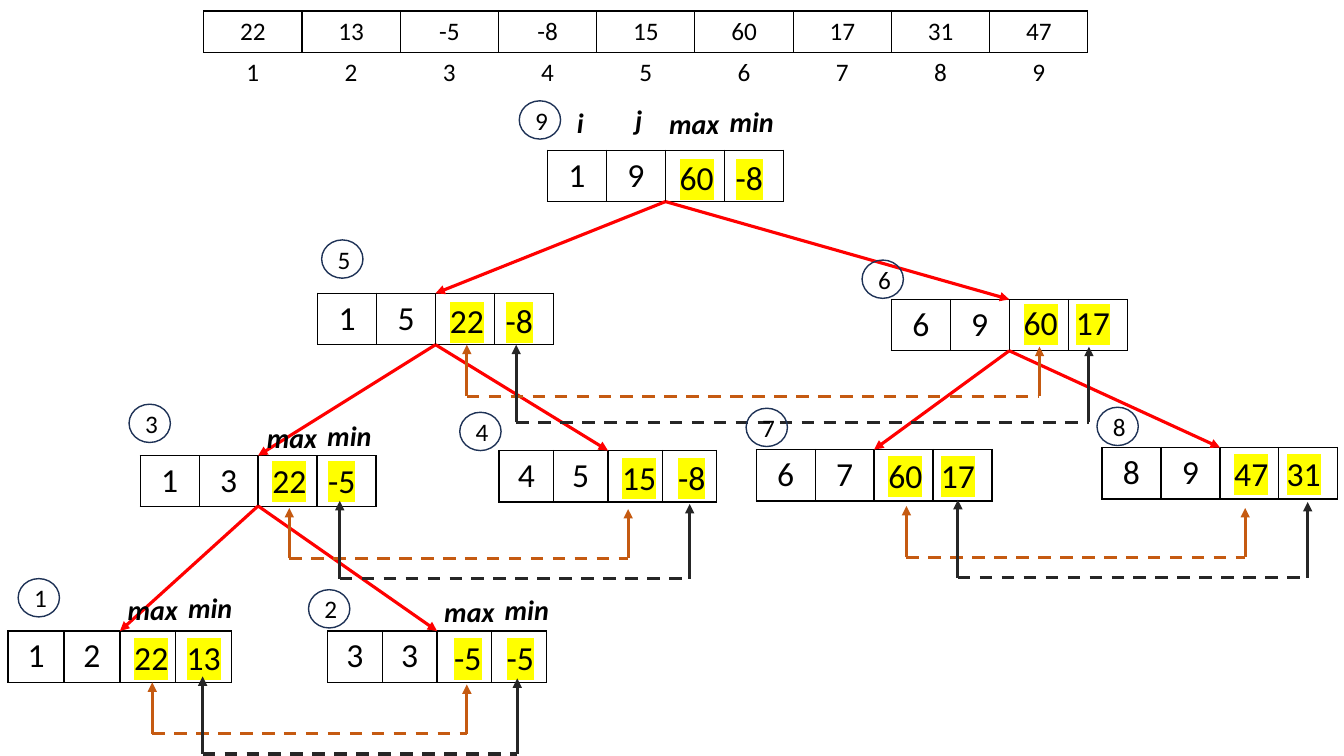
from dataclasses import dataclass

from lxml.etree import SubElement
from pptx import Presentation
from pptx.dml.color import RGBColor
from pptx.enum.dml import MSO_LINE
from pptx.enum.shapes import MSO_CONNECTOR, MSO_SHAPE
from pptx.enum.text import MSO_ANCHOR, MSO_AUTO_SIZE, PP_ALIGN
from pptx.oxml.ns import qn
from pptx.util import Emu, Pt

PX = 9144
FONT = "Calibri"
BLACK = RGBColor(0x00, 0x00, 0x00)
RED = RGBColor(0xFF, 0x00, 0x00)
YELLOW = RGBColor(0xFF, 0xFF, 0x00)
ORANGE = RGBColor(0xC5, 0x5A, 0x11)
CHARCOAL = RGBColor(0x26, 0x26, 0x26)
NAVY = RGBColor(0x1E, 0x32, 0x56)
PLAIN_TABLE_STYLE = "{2D5ABB26-0587-4C30-8999-92F81FD0307C}"
ALL_SIDES = ("a:lnL", "a:lnR", "a:lnT", "a:lnB")
TOP_SIDE = ("a:lnT",)


@dataclass
class Node:
    order: int
    box: tuple
    bounds: tuple
    extremes: tuple
    values_top: int
    badge: tuple
    labels: tuple = None


NUMBERS = (22, 13, -5, -8, 15, 60, 17, 31, 47)

NODES = (
    Node(1, (8, 626, 222, 50), (1, 2), (22, 13), 627, (18, 574), (109, 583)),
    Node(2, (325, 626, 217, 50), (3, 3), (-5, -5), 627, (306, 585), (423, 585)),
    Node(3, (139, 452, 234, 50), (1, 3), (22, -5), 451, (128, 401), (247, 412)),
    Node(4, (495, 447, 216, 51), (4, 5), (15, -8), 448, (456, 409)),
    Node(5, (315, 291, 234, 51), (1, 5), (22, -8), 293, (319, 238)),
    Node(6, (884, 297, 234, 51), (6, 9), (60, 17), 295, (855, 258)),
    Node(7, (750, 446, 234, 51), (6, 7), (60, 17), 446, (740, 405)),
    Node(8, (1093, 444, 234, 51), (8, 9), (47, 31), 444, (1088, 404)),
    Node(9, (543, 149, 234, 51), (1, 9), (60, -8), 151, (515, 100), (646, 101)),
)

BRANCHES = ((9, 5), (9, 6), (5, 3), (5, 4), (3, 1), (3, 2), (6, 7), (6, 8))

COMPARISONS = (
    (ORANGE, 728, (151, 677), (463, 679)),
    (CHARCOAL, 748, (201, 671), (513, 673)),
    (ORANGE, 553, (899, 502), (1235, 504)),
    (CHARCOAL, 573, (950, 496), (1297, 498)),
    (ORANGE, 554, (287, 504), (623, 505)),
    (CHARCOAL, 574, (337, 497), (684, 500)),
    (ORANGE, 393, (463, 342), (1031, 344)),
    (CHARCOAL, 419, (512, 342), (1080, 344)),
)


def px(*lengths):
    return [Emu(round(length * PX)) for length in lengths]


def write(frame, text, size, emphasis=False, highlight=None):
    paragraph = frame.paragraphs[0]
    paragraph.alignment = PP_ALIGN.CENTER
    font = paragraph.font
    font.name, font.size, font.color.rgb = FONT, Pt(size), BLACK
    if emphasis:
        font.bold = font.italic = True
    run = paragraph.add_run()
    run.text = str(text)
    if highlight:
        properties = run._r.get_or_add_rPr()
        mark = SubElement(properties, qn("a:highlight"))
        SubElement(mark, qn("a:srgbClr"), val=str(highlight))


def add_text(shapes, left, top, width, height, text, size, **style):
    box = shapes.add_textbox(*px(left, top, width, height))
    box.text_frame.word_wrap = True
    box.text_frame.auto_size = MSO_AUTO_SIZE.SHAPE_TO_FIT_TEXT
    write(box.text_frame, text, size, **style)


def add_label(shapes, left, top, text, width=85):
    add_text(shapes, left, top, width, 44, text, 20, emphasis=True)


def set_borders(cell, sides):
    properties = cell._tc.get_or_add_tcPr()
    for side in sides:
        line = SubElement(properties, qn(side), w=str(Pt(1)))
        fill = SubElement(line, qn("a:solidFill"))
        SubElement(fill, qn("a:srgbClr"), val=str(BLACK))


def add_grid(shapes, box, rows, size):
    frame = shapes.add_table(len(rows), len(rows[0][0]), *px(*box))
    frame._element.find(".//" + qn("a:tableStyleId")).text = PLAIN_TABLE_STYLE
    table = frame.table
    table.first_row = table.horz_banding = False
    for row_index, (values, sides) in enumerate(rows):
        for column_index, value in enumerate(values):
            cell = table.cell(row_index, column_index)
            cell.vertical_anchor = MSO_ANCHOR.MIDDLE
            set_borders(cell, sides)
            cell.fill.background()
            write(cell.text_frame, value, size)
    return frame


def add_line(shapes, start, end, color, arrow=True, dashed=False):
    connector = shapes.add_connector(MSO_CONNECTOR.STRAIGHT, *px(*start, *end))
    connector.line.color.rgb = color
    connector.line.width = Pt(2.25)
    if dashed:
        connector.line.dash_style = MSO_LINE.DASH
    if arrow:
        SubElement(connector.line._get_or_add_ln(), qn("a:tailEnd"), type="triangle")
    SubElement(connector._element.spPr, qn("a:effectLst"))
    return connector


def add_branch(shapes, parent, child):
    connector = add_line(shapes, (0, 0), (0, 0), RED)
    connector.begin_connect(parent, 2)
    connector.end_connect(child, 0)


def add_comparison(shapes, color, base, left_tip, right_tip):
    group = shapes.add_group_shape()
    left_foot, right_foot = (left_tip[0], base), (right_tip[0], base)
    add_line(group.shapes, left_foot, right_foot, color, arrow=False, dashed=True)
    add_line(group.shapes, left_foot, left_tip, color)
    add_line(group.shapes, right_foot, right_tip, color)


def add_badge(shapes, left, top, order):
    badge = shapes.add_shape(MSO_SHAPE.OVAL, *px(left, top, 41, 38))
    badge.shadow.inherit = False
    badge.fill.background()
    badge.line.color.rgb = NAVY
    badge.line.width = Pt(1)
    badge.text_frame.vertical_anchor = MSO_ANCHOR.MIDDLE
    write(badge.text_frame, order, 18)


def add_extremes(shapes, node):
    left, _, width, _ = node.box
    middle = left + width // 2
    maximum, minimum = node.extremes
    add_text(shapes, middle, node.values_top, 62, 50, maximum, 24, highlight=YELLOW)
    add_text(shapes, middle + 49, node.values_top, 68, 50, minimum, 24, highlight=YELLOW)


def main():
    presentation = Presentation()
    presentation.slide_width, presentation.slide_height = px(1333, 750)
    slide = presentation.slides.add_slide(presentation.slide_layouts[6])
    shapes = slide.shapes

    positions = range(1, len(NUMBERS) + 1)
    array_rows = ((NUMBERS, ALL_SIDES), (positions, TOP_SIDE))
    add_grid(shapes, (202, 11, 877, 82), array_rows, 18)

    tables = {}
    for node in NODES:
        row = ((*node.bounds, "", ""), ALL_SIDES)
        tables[node.order] = add_grid(shapes, node.box, (row,), 24)
    for parent, child in BRANCHES:
        add_branch(shapes, tables[parent], tables[child])
    for node in NODES:
        add_extremes(shapes, node)
    for comparison in COMPARISONS:
        add_comparison(shapes, *comparison)
    for node in NODES:
        add_badge(shapes, *node.badge, node.order)
        if node.labels:
            left, top = node.labels
            add_label(shapes, left, top, "max")
            add_label(shapes, left + 57, top - 2, "min")
    add_label(shapes, 551, 100, "i", width=49)
    add_label(shapes, 609, 97, "j", width=49)

    presentation.save("out.pptx")


if __name__ == "__main__":
    main()
